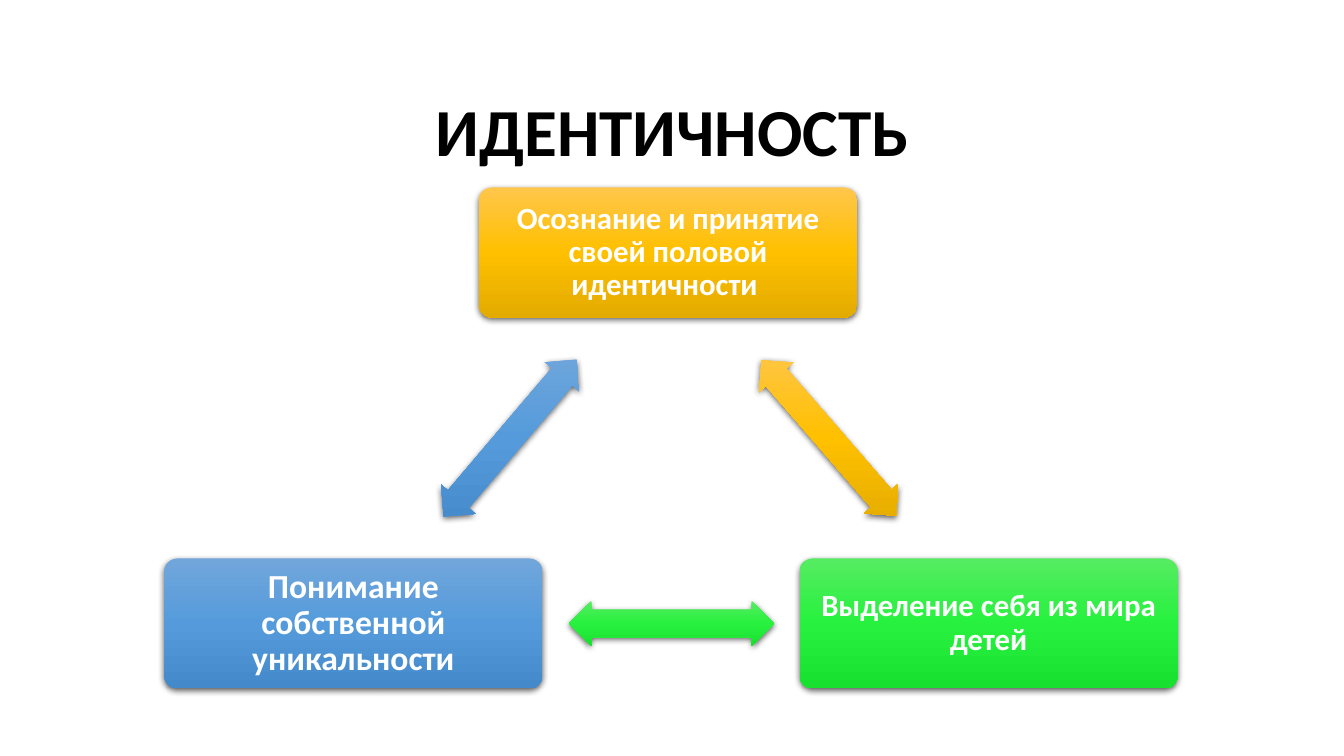
from dataclasses import dataclass

from lxml.etree import SubElement
from pptx import Presentation
from pptx.dml.color import RGBColor
from pptx.enum.shapes import MSO_SHAPE
from pptx.enum.text import MSO_ANCHOR, MSO_AUTO_SIZE, PP_ALIGN
from pptx.oxml import parse_xml
from pptx.oxml.ns import nsdecls, qn
from pptx.util import Inches, Pt

COLORS = {"text": "FFFFFF", "title": "000000", "shadow": "000000"}
GRADIENTS = {
    "yellow": ("FFC64B", "FFC000", "E3AB00"),
    "green": ("56EC62", "27F13E", "18E02F"),
    "blue": ("71A6DB", "559BDB", "448ACA"),
}
BOX_W, BOX_H = 3.75, 1.29
ARROW_W, ARROW_H = 2.04, 0.45


@dataclass
class Box:
    text: str
    color: str
    left: float
    top: float
    size: int
    inset: float


@dataclass
class Arrow:
    color: str
    left: float
    top: float
    rotation: float


BOXES = [
    Box("Осознание и принятие своей половой идентичности ", "yellow", 4.75, 1.86, 22, 0.13),
    Box("Выделение себя из мира детей", "green", 7.93, 5.54, 22, 0.13),
    Box("Понимание собственной уникальности", "blue", 1.63, 5.54, 24, 0.14),
]
ARROWS = [
    Arrow("yellow", 7.2, 4.12, 49.1),
    Arrow("green", 5.64, 5.96, 180),
    Arrow("blue", 4.04, 4.12, 310.3),
]


def style_shape(sp, color: str) -> None:
    """Vertical three-stop gradient, no outline, soft shadow below."""
    stops = "".join(
        f'<a:gs pos="{i * 50000}"><a:srgbClr val="{c}"/></a:gs>'
        for i, c in enumerate(GRADIENTS[color])
    )
    sp._element.spPr.append(parse_xml(
        f'<a:gradFill {nsdecls("a")} rotWithShape="0"><a:gsLst>{stops}</a:gsLst>'
        '<a:lin ang="5400000" scaled="0"/></a:gradFill>'
    ))
    sp.line.fill.background()
    sp.shadow.inherit = False
    effects = sp._element.spPr.find(qn("a:effectLst"))
    shadow = SubElement(effects, qn("a:outerShdw"), blurRad=str(Pt(4.5)), dist=str(Pt(1.5)),
                        dir="5400000", algn="ctr", rotWithShape="0")
    clr = SubElement(shadow, qn("a:srgbClr"), val=COLORS["shadow"])
    SubElement(clr, qn("a:alpha"), val="63000")


def write_text(tf, text: str, size: int, color: str) -> None:
    p = tf.paragraphs[0]
    p.alignment = PP_ALIGN.CENTER
    r = p.add_run()
    r.text = text
    for name, value in {"name": "Calibri", "size": Pt(size), "bold": True}.items():
        setattr(r.font, name, value)
    r.font.color.rgb = RGBColor.from_string(COLORS[color])


def add_box(s, box: Box) -> None:
    sp = s.shapes.add_shape(MSO_SHAPE.ROUNDED_RECTANGLE, Inches(box.left), Inches(box.top),
                            Inches(BOX_W), Inches(BOX_H))
    sp.adjustments[0] = 0.1
    style_shape(sp, box.color)
    tf = sp.text_frame
    inset = Inches(box.inset)
    frame_format = {
        "word_wrap": True, "vertical_anchor": MSO_ANCHOR.MIDDLE,
        "margin_left": inset, "margin_right": inset,
        "margin_top": inset, "margin_bottom": inset,
    }
    for name, value in frame_format.items():
        setattr(tf, name, value)
    write_text(tf, box.text, box.size, "text")
    tf.paragraphs[0].line_spacing = 0.9


def add_arrow(s, arrow: Arrow) -> None:
    sp = s.shapes.add_shape(MSO_SHAPE.LEFT_RIGHT_ARROW, Inches(arrow.left), Inches(arrow.top),
                            Inches(ARROW_W), Inches(ARROW_H))
    sp.adjustments[0], sp.adjustments[1] = 0.6, 0.5
    sp.rotation = arrow.rotation
    style_shape(sp, arrow.color)


def add_title(s, text: str) -> None:
    sp = s.shapes.add_textbox(Inches(3.99), Inches(0.84), Inches(5.36), Inches(0.91))
    tf = sp.text_frame
    tf.word_wrap = False
    tf.auto_size = MSO_AUTO_SIZE.SHAPE_TO_FIT_TEXT
    write_text(tf, text, 48, "title")


def main() -> None:
    prs = Presentation()
    prs.slide_width, prs.slide_height = Inches(13.33), Inches(7.5)
    s = prs.slides.add_slide(prs.slide_layouts[6])

    # Triangle of linked boxes
    for box, arrow in zip(BOXES, ARROWS):
        add_box(s, box)
        add_arrow(s, arrow)

    # Title
    add_title(s, "ИДЕНТИЧНОСТЬ")
    prs.save("out.pptx")


if __name__ == "__main__":
    main()
